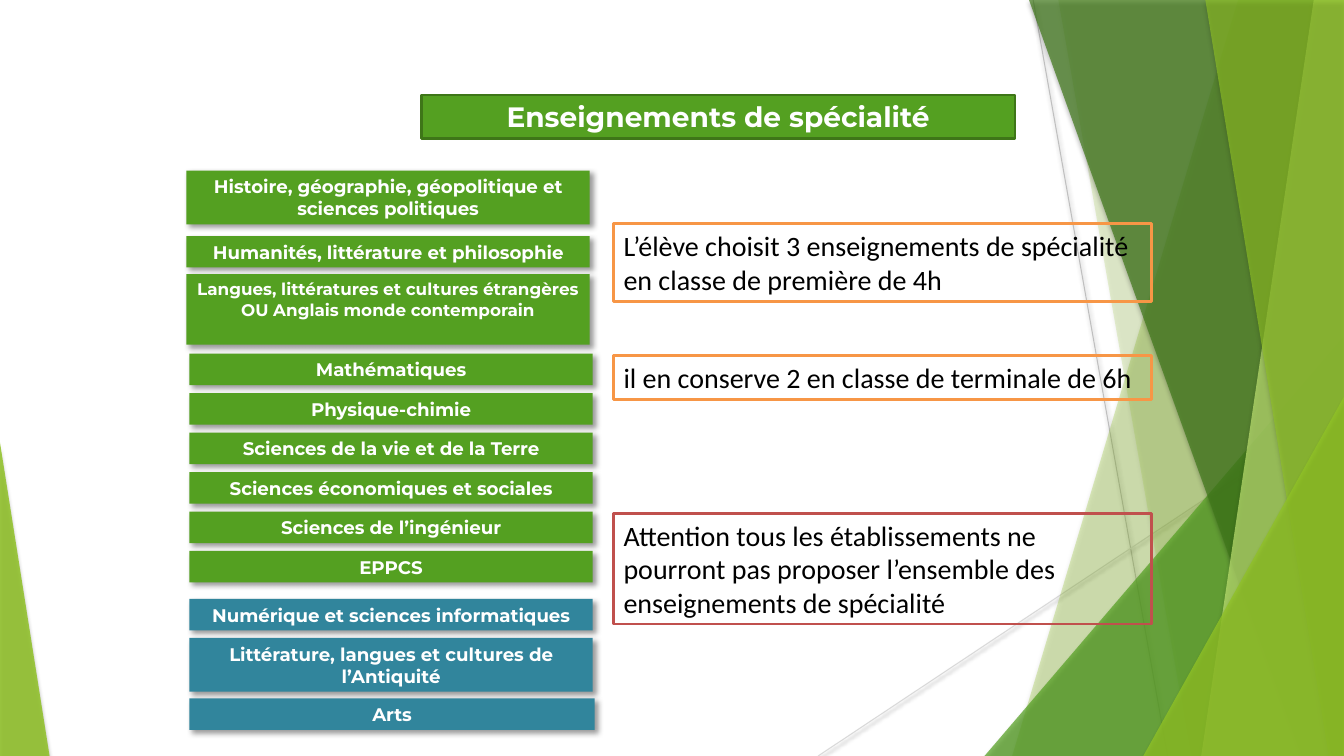
"""Build the slide on the specialist subjects of the French lycée."""
from dataclasses import dataclass
from typing import Optional

from lxml.etree import SubElement
from pptx import Presentation
from pptx.dml.color import RGBColor
from pptx.enum.shapes import MSO_CONNECTOR, MSO_SHAPE
from pptx.enum.text import MSO_ANCHOR, PP_ALIGN
from pptx.oxml.ns import qn
from pptx.util import Inches, Pt

COLS, ROWS = 160, 90
SLIDE_W, SLIDE_H = Inches(13.333), Inches(7.5)


@dataclass(frozen=True)
class Shadow:
    alpha: int
    blur: float
    dist: float
    angle: int


@dataclass(frozen=True)
class Theme:
    green: str = "54A021"
    dark: str = "3F7819"
    lime: str = "90C226"
    pale: str = "C0E474"
    edge: str = "3E7618"
    teal: str = "31859C"
    orange: str = "F79646"
    red: str = "C0504D"
    white: str = "FFFFFF"
    black: str = "000000"
    ray: str = "BFBFBF"
    pale_ray: str = "D9D9D9"
    label_font: str = "Montserrat"
    note_font: str = "Calibri"
    large: int = 20
    medium: int = 13
    small: int = 12
    border: float = 2
    hairline: float = 0.75
    box_shadow: Shadow = Shadow(40, 4, 3, 45)
    facet_shadow: Shadow = Shadow(35, 3, 2, 90)
    ray_shadow: Shadow = Shadow(38, 3.1, 1.6, 90)


T = Theme()


@dataclass(frozen=True)
class Ray:
    x1: float
    y1: float
    x2: float
    y2: float
    color: str


@dataclass(frozen=True)
class Facet:
    """A panel reaching the right edge, with its left side from top to bottom."""
    top: float
    bottom: float
    color: str
    alpha: int


@dataclass(frozen=True)
class Peak:
    """A right triangle standing on the bottom edge."""
    left: float
    right: float
    top: float
    apex: int
    color: str
    alpha: int


@dataclass(frozen=True)
class Box:
    text: str
    top: float
    left: float = 22.55
    width: float = 48
    height: float = 3.75
    fill: Optional[str] = T.green
    line: Optional[str] = None
    shadow: Optional[Shadow] = T.box_shadow
    align: Optional[PP_ALIGN] = PP_ALIGN.CENTER
    font: str = T.label_font
    size: int = T.medium
    color: str = T.white
    bold: bool = True


RAYS = [Ray(123, 0, 139, 90, T.ray), Ray(160, 48.4, 97.4, 90, T.pale_ray)]

PANELS = [
    Facet(147.4, 120.5, T.lime, 30),
    Facet(126, 141.8, T.lime, 20),
    Peak(117.2, 160, 40, 1, T.green, 72),
    Facet(122.5, 154.9, T.dark, 70),
    Facet(156.4, 143, T.pale, 70),
    Facet(143.5, 158.2, T.lime, 65),
    Peak(136.1, 160, 47.2, 1, T.lime, 80),
    Peak(0, 5.9, 52.7, 0, T.lime, 85),
]

TITLE = Box("Enseignements de spécialité", 11.3, 50.15, 70.7, 5.2,
            line=T.edge, shadow=None, size=T.large)

STACK_TOP, STACK_PITCH = 42.1, 4.7
STACK = ["Mathématiques", "Physique-chimie", "Sciences de la vie et de la Terre",
         "Sciences économiques et sociales", "Sciences de l’ingénieur", "EPPCS"]

SUBJECTS = [
    Box("Histoire, géographie, géopolitique et sciences politiques", 20.3, 22.2, height=6.4),
    Box("Humanités, littérature et philosophie", 28.1, 22.2),
    Box("Langues, littératures et cultures étrangères OU Anglais monde contemporain",
        32.65, 22.2, height=8.4, size=T.small),
    *(Box(name, STACK_TOP + i * STACK_PITCH) for i, name in enumerate(STACK)),
    Box("Numérique et sciences informatiques", 71.3, fill=T.teal),
    Box("Littérature, langues et cultures de l’Antiquité", 75.95, height=6.4, fill=T.teal),
    Box("Arts", 83.15, width=48.25, fill=T.teal),
]


def note(text: str, top: float, height: float, line: str) -> Box:
    return Box(text, top, 73.05, 64, height, None, line, None, None,
               T.note_font, T.large, T.black, False)


NOTES = [
    note("L’élève choisit 3 enseignements de spécialité en classe de première de 4h",
         26.65, 9.25, T.orange),
    note("il en conserve 2 en classe de terminale de 6h", 42.35, 5.2, T.orange),
    note("Attention tous les établissements ne pourront pas proposer l’ensemble "
         "des enseignements de spécialité", 61.1, 13.2, T.red),
]


def gx(cols: float) -> int:
    return round(SLIDE_W * cols / COLS)


def gy(rows: float) -> int:
    return round(SLIDE_H * rows / ROWS)


def rgb(color: str) -> RGBColor:
    return RGBColor.from_string(color)


def apply(target, formats: dict) -> None:
    for name, value in formats.items():
        setattr(target, name, value)


def add_alpha(clr, percent: int) -> None:
    SubElement(clr, qn("a:alpha"), val=str(percent * 1000))


def cast_shadow(effects, shadow: Shadow) -> None:
    outer = SubElement(effects, qn("a:outerShdw"), blurRad=str(Pt(shadow.blur)),
                       dist=str(Pt(shadow.dist)), dir=str(shadow.angle * 60000),
                       algn="tl", rotWithShape="0")
    add_alpha(SubElement(outer, qn("a:srgbClr"), val=T.black), shadow.alpha)


def paint(sp, fill: Optional[str], line: Optional[str], shadow: Optional[Shadow]) -> None:
    if fill:
        sp.fill.solid()
        sp.fill.fore_color.rgb = rgb(fill)
    else:
        sp.fill.background()
    if line:
        sp.line.color.rgb = rgb(line)
        sp.line.width = Pt(T.border)
    else:
        sp.line.fill.background()
    sp.shadow.inherit = False
    if shadow:
        cast_shadow(sp._element.spPr.find(qn("a:effectLst")), shadow)


def draw_ray(s, ray: Ray) -> None:
    sp = s.shapes.add_connector(MSO_CONNECTOR.STRAIGHT, gx(ray.x1), gy(ray.y1),
                                gx(ray.x2), gy(ray.y2))
    sp.line.color.rgb = rgb(ray.color)
    sp.line.width = Pt(T.hairline)
    cast_shadow(SubElement(sp._element.spPr, qn("a:effectLst")), T.ray_shadow)


def draw_panel(s, panel: Facet | Peak) -> None:
    if isinstance(panel, Facet):
        outline = s.shapes.build_freeform(gx(panel.top), 0)
        outline.add_line_segments([(gx(COLS), 0), (gx(COLS), gy(ROWS)),
                                   (gx(panel.bottom), gy(ROWS))])
        sp = outline.convert_to_shape()
    else:
        sp = s.shapes.add_shape(MSO_SHAPE.ISOSCELES_TRIANGLE, gx(panel.left), gy(panel.top),
                                gx(panel.right - panel.left), gy(ROWS - panel.top))
        sp.adjustments[0] = panel.apex
    paint(sp, panel.color, None, T.facet_shadow)
    add_alpha(sp._element.spPr.find(qn("a:solidFill")).find(qn("a:srgbClr")), panel.alpha)


def draw_box(s, box: Box) -> None:
    sp = s.shapes.add_shape(MSO_SHAPE.RECTANGLE, gx(box.left), gy(box.top),
                            gx(box.width), gy(box.height))
    paint(sp, box.fill, box.line, box.shadow)
    tf = sp.text_frame
    apply(tf, {"word_wrap": True, "vertical_anchor": MSO_ANCHOR.TOP})
    p = tf.paragraphs[0]
    p.alignment = box.align or PP_ALIGN.LEFT
    r = p.add_run()
    r.text = box.text
    apply(r.font, {"name": box.font, "size": Pt(box.size), "bold": box.bold})
    r.font.color.rgb = rgb(box.color)


def main() -> None:
    prs = Presentation()
    apply(prs, {"slide_width": SLIDE_W, "slide_height": SLIDE_H})
    s = prs.slides.add_slide(prs.slide_layouts[6])
    for ray in RAYS:
        draw_ray(s, ray)
    for panel in PANELS:
        draw_panel(s, panel)
    for box in [TITLE, *SUBJECTS, *NOTES]:
        draw_box(s, box)
    prs.save("out.pptx")


if __name__ == "__main__":
    main()
